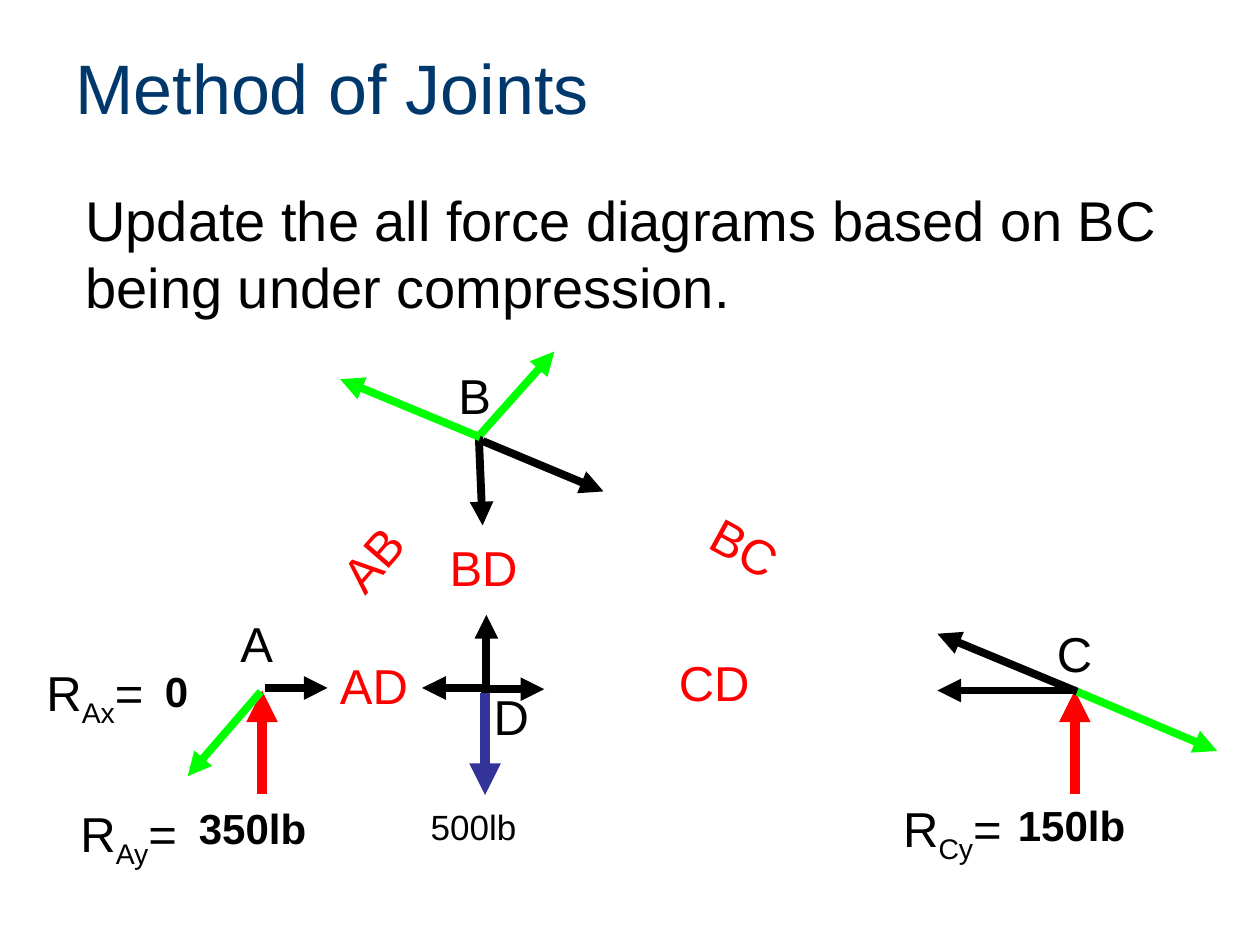
from lxml import etree
from pptx import Presentation
from pptx.dml.color import RGBColor
from pptx.enum.shapes import MSO_CONNECTOR
from pptx.enum.text import MSO_ANCHOR, PP_ALIGN
from pptx.oxml.ns import qn
from pptx.util import Inches, Pt

STRAIGHT = MSO_CONNECTOR.STRAIGHT
MIDDLE = MSO_ANCHOR.MIDDLE
LEFT = PP_ALIGN.LEFT

NAVY = RGBColor(0x00, 0x38, 0x6B)
BLACK = RGBColor(0x00, 0x00, 0x00)
RED = RGBColor(0xFF, 0x00, 0x00)
GREEN = RGBColor(0x00, 0xFF, 0x00)
BLUE = RGBColor(0x33, 0x33, 0x99)
FONT = "Arial"

TITLE = "Method of Joints"
BODY = "Update the all force diagrams based on BC being under compression."

# text, left, top, width
VALUES = [("0", 1.21, 5.23, 0.55), ("150lb", 7.98, 6.3, 1.16), ("350lb", 1.48, 6.32, 1.51)]
JOINTS = [("C", 8.29, 4.9), ("A", 1.81, 4.82), ("D", 3.82, 5.4), ("B", 3.54, 2.85)]
REACTIONS = [("Ay", 0.54, 6.33, 1.29), ("Cy", 7.07, 6.29, 1.47), ("Ax", 0.27, 5.21, 1.21)]
MEMBERS = [
    ("AB", 2.55, 4.05, 0.99, 311.1),
    ("BC", 5.53, 4.12, 0.99, 28.9),
    ("AD", 2.6, 5.15, 1.03, 0),
    ("CD", 5.29, 5.13, 1.03, 0),
    ("BD", 3.47, 4.22, 1.03, 0),
]

# colour, width, arrows as start x, start y, tip x, tip y
LOADS = [
    (BLUE, 6, [(3.85, 5.5, 3.85, 6.31)]),
    (RED, 6, [(2.08, 6.3, 2.08, 5.48), (8.53, 6.3, 8.53, 5.48)]),
    (BLACK, 4.5, [
        (2.1, 5.46, 2.6, 5.46),
        (3.85, 5.46, 3.35, 5.46),
        (3.82, 5.47, 4.32, 5.47),
        (8.51, 5.48, 7.44, 5.48),
        (3.86, 5.49, 3.86, 4.88),
        (3.8, 3.46, 3.83, 4.17),
        (3.83, 3.5, 4.79, 3.9),
        (8.55, 5.49, 7.44, 5.03),
    ]),
]
SOLVED = (GREEN, 4.5, [
    (2.07, 5.49, 1.49, 6.16),
    (3.81, 3.45, 4.4, 2.79),
    (3.81, 3.47, 2.7, 3.01),
    (8.55, 5.49, 9.66, 5.96),
])


def style(r, size, color, bold=False):
    r.font.name = FONT
    r.font.size = Pt(size)
    r.font.color.rgb = color
    r.font.bold = bold


def add_text(s, parts, x, y, w, h, size, color=BLACK, bold=False, angle=0):
    box = s.shapes.add_textbox(Inches(x), Inches(y), Inches(w), Inches(h))
    box.rotation = angle
    box.text_frame.word_wrap = True
    p = box.text_frame.paragraphs[0]
    for i, part in enumerate(parts):
        r = p.add_run()
        r.text = part
        style(r, size, color, bold)
        if i == 1:
            r._r.get_or_add_rPr().set("baseline", "-25000")


def add_arrows(s, color, width, arrows):
    for arrow in arrows:
        line = s.shapes.add_connector(STRAIGHT, *map(Inches, arrow))
        line.line.color.rgb = color
        line.line.width = Pt(width)
        etree.SubElement(line.line._get_or_add_ln(), qn("a:tailEnd"), type="triangle")
        etree.SubElement(line._element.spPr, qn("a:effectLst"))


prs = Presentation()
prs.slide_width, prs.slide_height = Inches(10), Inches(7.5)
s = prs.slides.add_slide(prs.slide_layouts[5])

title = s.shapes.title
title.left, title.top, title.width, title.height = map(Inches, (0.5, 0.3, 9, 0.78))
tf = title.text_frame
tf.text = TITLE
tf.vertical_anchor = MIDDLE
tf.paragraphs[0].alignment = LEFT
style(tf.paragraphs[0].runs[0], 40, NAVY)

for text, x, y, w in VALUES:
    add_text(s, [text], x, y, w, 0.5, 24, bold=True)
add_text(s, [BODY], 0.58, 1.42, 9.56, 1.17, 32)
for group in LOADS:
    add_arrows(s, *group)
for text, x, y in JOINTS:
    add_text(s, [text], x, y, 0.42, 0.57, 28)
for sub, x, y, w in REACTIONS:
    add_text(s, ["R", sub, "="], x, y, w, 0.57, 28)
add_text(s, ["500lb"], 3.32, 6.34, 1.07, 0.43, 20)
for text, x, y, w, angle in MEMBERS:
    add_text(s, [text], x, y, w, 0.57, 28, RED, angle=angle)
add_arrows(s, *SOLVED)

prs.save("out.pptx")
